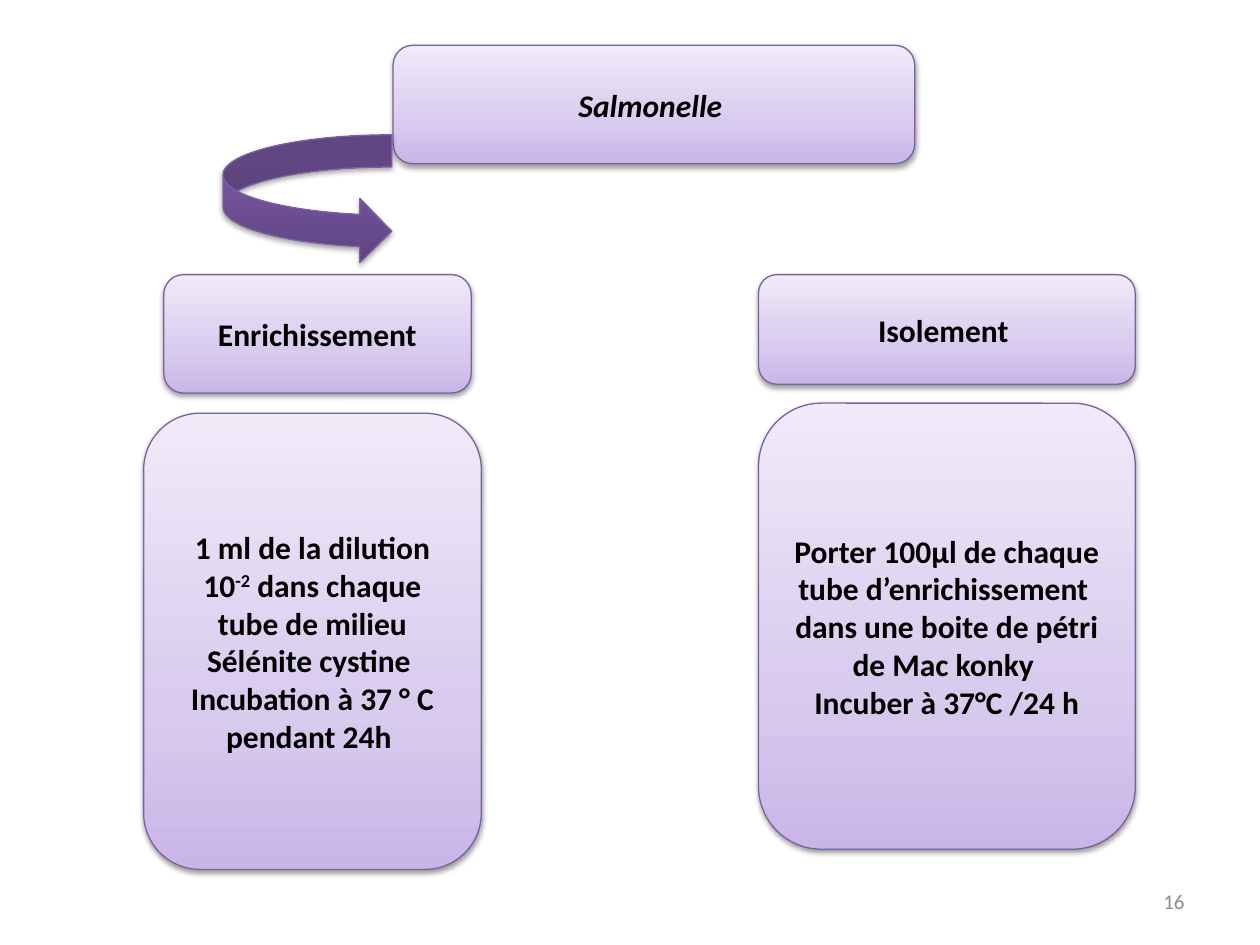
from lxml import etree
from pptx import Presentation
from pptx.dml.color import RGBColor
from pptx.enum.shapes import MSO_SHAPE
from pptx.enum.text import MSO_ANCHOR, PP_ALIGN
from pptx.oxml import parse_xml
from pptx.oxml.ns import qn
from pptx.util import Inches, Pt

ROUND, CURVE = MSO_SHAPE.ROUNDED_RECTANGLE, MSO_SHAPE.CURVED_RIGHT_ARROW
MIDDLE = MSO_ANCHOR.MIDDLE
CENTER, RIGHT = PP_ALIGN.CENTER, PP_ALIGN.RIGHT
NS = "http://schemas.openxmlformats.org/drawingml/2006/main"

COLORS = {
    "text": "000000", "number": "8C8C8C", "line": "7D60A0", "shadow": "000000",
    "low": "C9B5E8", "mid": "D8CBEE", "high": "F0EAF9",
    "dark": "5F4480", "plum": "7B58A6", "violet": "7C57A8",
}
# Gradient stops run from bottom to top; shadow is opacity %, offset in points
LIGHT = {"stops": [(0, "low"), (35, "mid"), (100, "high")], "shadow": (38, 1.6)}
DARK = {"stops": [(0, "dark"), (80, "plum"), (100, "violet")], "shadow": (35, 1.8)}
BLUR = 3.1

BOLD = {"name": "Calibri", "size": Pt(18), "bold": True}
ITALIC = {**BOLD, "italic": True}
SMALL = {"name": "Calibri", "size": Pt(12)}

# Each paragraph is a list of (text, baseline %) runs
TITLE = [[("Salmonelle ", 0)]]
ENRICH = [[(" Enrichissement ", 0)]]
ISOLATE = [[("Isolement ", 0)]]
ENRICH_STEPS = [
    [("1 ml de la dilution 10", 0), ("-2", 30),
     (" dans chaque tube de milieu Sélénite cystine ", 0)],
    [("Incubation à 37 ° C pendant 24h ", 0)],
]
ISOLATE_STEPS = [
    [("Porter 100µl de chaque tube d’enrichissement ", 0)],
    [("dans une boite de pétri de Mac konky ", 0)],
    [("Incuber à 37°C /24 h", 0)],
]
NUMBER = [[("16", 0)]]

LEFT, WIDE = 6.02, 2.99  # right-hand column
SHAPES = [
    (ROUND, (3.12, 0.36, 4.14, 0.94), LIGHT, TITLE, ITALIC),
    (ROUND, (1.3, 2.18, 2.44, 0.94), LIGHT, ENRICH, BOLD),
    (ROUND, (LEFT, 2.18, WIDE, 0.87), LIGHT, ISOLATE, BOLD),
    (CURVE, (1.77, 1.07, 1.34, 1.02), DARK, [], BOLD),
    (ROUND, (1.14, 3.28, 2.68, 3.62), LIGHT, ENRICH_STEPS, BOLD),
    (ROUND, (LEFT, 3.2, WIDE, 3.54), LIGHT, ISOLATE_STEPS, BOLD),
]
NUMBER_BOX = (7.17, 6.95, 2.33, 0.4)


def paint(shape, look):
    """Apply the outline, the gradient and the soft drop shadow."""
    shape.line.color.rgb = RGBColor.from_string(COLORS["line"])
    shape.line.width = Pt(0.75)
    shape.shadow.inherit = False
    props = shape._element.spPr
    stops = "".join(
        f'<a:gs pos="{pos * 1000}"><a:srgbClr val="{COLORS[key]}"/></a:gs>'
        for pos, key in look["stops"])
    props.find(qn("a:ln")).addprevious(parse_xml(
        f'<a:gradFill xmlns:a="{NS}" rotWithShape="1"><a:gsLst>{stops}</a:gsLst>'
        '<a:lin ang="16200000" scaled="0"/></a:gradFill>'))
    alpha, dist = look["shadow"]
    drop = etree.SubElement(
        props.find(qn("a:effectLst")), qn("a:outerShdw"),
        blurRad=str(Pt(BLUR)), dist=str(Pt(dist)), dir="5400000", rotWithShape="0")
    tint = etree.SubElement(drop, qn("a:srgbClr"), val=COLORS["shadow"])
    etree.SubElement(tint, qn("a:alpha"), val=str(alpha * 1000))


def write(shape, paras, style, align, color):
    frame = shape.text_frame
    frame.word_wrap = True
    frame.vertical_anchor = MIDDLE
    for i, runs in enumerate(paras):
        para = frame.add_paragraph() if i else frame.paragraphs[0]
        para.alignment = align
        for text, base in runs:
            run = para.add_run()
            run.text = text
            for name, value in style.items():
                setattr(run.font, name, value)
            run.font.color.rgb = RGBColor.from_string(COLORS[color])
            if base:
                run._r.get_or_add_rPr().set("baseline", str(base * 1000))


def main():
    deck = Presentation()
    deck.slide_width, deck.slide_height = Inches(10), Inches(7.5)
    slide = deck.slides.add_slide(deck.slide_layouts[6])
    for kind, box, look, paras, style in SHAPES:
        shape = slide.shapes.add_shape(kind, *map(Inches, box))
        paint(shape, look)
        write(shape, paras, style, CENTER, "text")
    number = slide.shapes.add_textbox(*map(Inches, NUMBER_BOX))
    write(number, NUMBER, SMALL, RIGHT, "number")
    deck.save("out.pptx")


if __name__ == "__main__":
    main()
